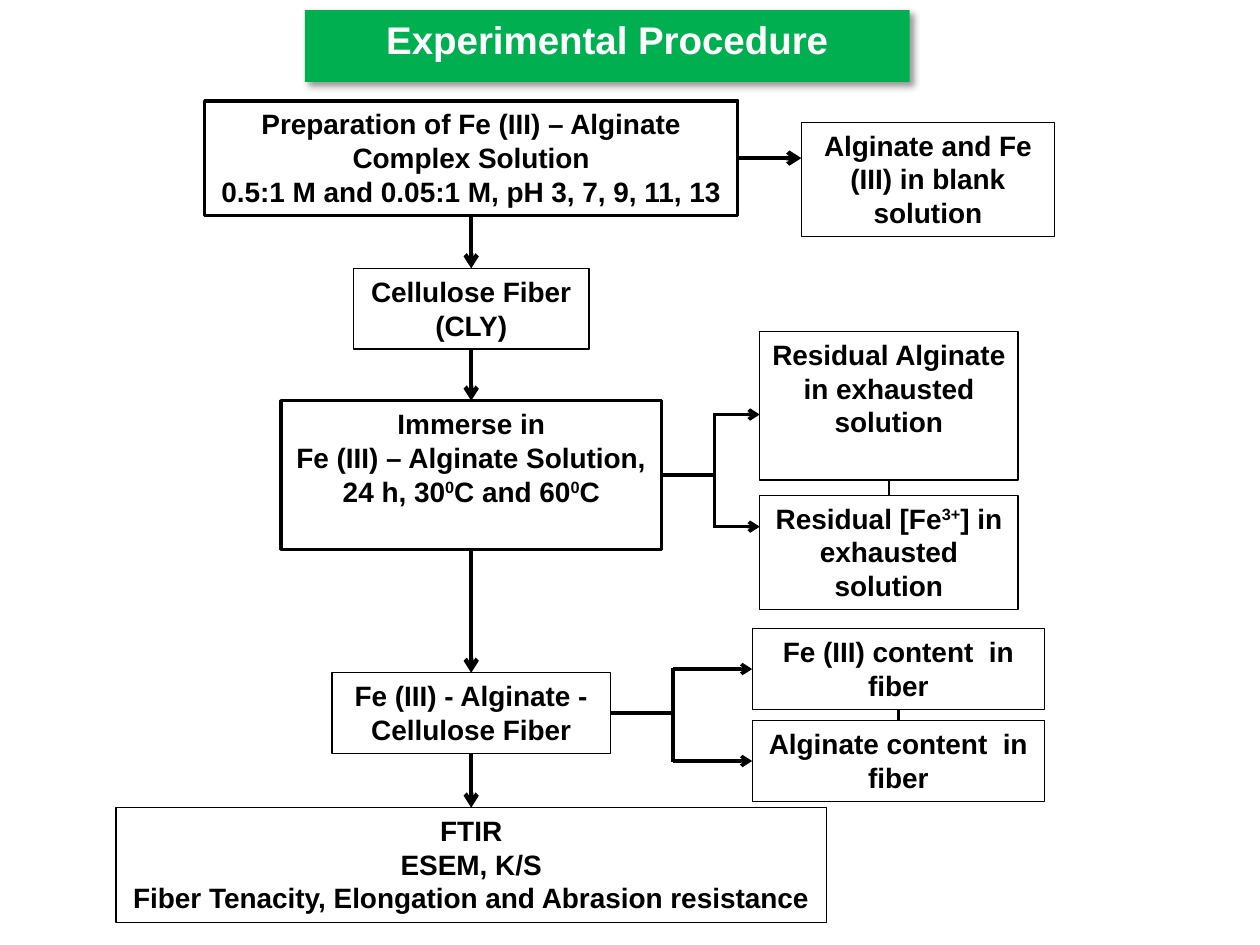
import pptx
import pptx.dml.color
import pptx.enum.shapes
import pptx.enum.text
import pptx.oxml
import pptx.oxml.ns
import pptx.util
from pptx.util import Inches

COLORS = {"ink": "000000", "paper": "FFFFFF", "title": "00B050"}
FONT = "Arial"
AXIS = 3.74  # shared centre of the main flow
TOP, LEFT, BOTTOM, RIGHT = range(4)
NAMESPACE = pptx.oxml.ns.nsdecls("a")


def rgb(name):
    return pptx.dml.color.RGBColor.from_string(COLORS[name])


def write_text(shape, text, size=16, color="ink", wrap=True):
    """Write one paragraph a line; parts between ^ signs are superscript."""
    frame = shape.text_frame
    frame.word_wrap = wrap
    frame.vertical_anchor = pptx.enum.text.MSO_ANCHOR.TOP
    for index, line in enumerate(text.split("\n")):
        paragraph = frame.add_paragraph() if index else frame.paragraphs[0]
        paragraph.alignment = pptx.enum.text.PP_ALIGN.CENTER
        for position, part in enumerate(line.split("^")):
            run = paragraph.add_run()
            run.text = part
            run.font.name = FONT
            run.font.size = pptx.util.Pt(size)
            run.font.bold = True
            run.font.color.rgb = rgb(color)
            if position % 2:
                run._r.get_or_add_rPr().set("baseline", "30000")


def add_box(slide, left, top, width, height, text, line=0.75, fill=None, **text_format):
    shape = slide.shapes.add_shape(
        pptx.enum.shapes.MSO_SHAPE.RECTANGLE,
        Inches(left), Inches(top), Inches(width), Inches(height))
    shape.shadow.inherit = False
    if fill:
        shape.fill.solid()
        shape.fill.fore_color.rgb = rgb(fill)
    else:
        shape.fill.background()
    if line:
        shape.line.color.rgb = rgb("ink")
        shape.line.width = pptx.util.Pt(line)
    else:
        shape.line.fill.background()
    write_text(shape, text, **text_format)
    return shape


def add_step(slide, top, width, height, text, **box_format):
    """Add a box of the main flow, centred on its axis."""
    return add_box(slide, AXIS - width / 2, top, width, height, text,
                   wrap=False, **box_format)


def add_title(slide, text):
    shape = add_box(slide, 2.42, 0.08, 4.8, 0.57, text, line=None,
                    fill="title", size=22, color="paper")
    effects = shape._element.spPr.find(pptx.oxml.ns.qn("a:effectLst"))
    effects.append(pptx.oxml.parse_xml(
        f'<a:outerShdw {NAMESPACE} blurRad="50800" dist="38100" dir="2700000" '
        f'algn="tl" rotWithShape="0"><a:srgbClr val="{COLORS["ink"]}">'
        '<a:alpha val="40000"/></a:srgbClr></a:outerShdw>'))


def side(shape, site):
    """Return the middle of one side of a box, in inches."""
    x = {LEFT: 0, RIGHT: 1}.get(site, 0.5) * shape.width + shape.left
    y = {TOP: 0, BOTTOM: 1}.get(site, 0.5) * shape.height + shape.top
    return x / Inches(1), y / Inches(1)


def add_link(slide, start, end, width=2.5, arrow=True):
    """Join two ends, each a point or a (box, side) pair."""
    glued = [not isinstance(stop[0], (int, float)) for stop in (start, end)]
    points = [side(*stop) if joined else stop
              for stop, joined in zip((start, end), glued)]
    connector = slide.shapes.add_connector(
        pptx.enum.shapes.MSO_CONNECTOR.STRAIGHT,
        *(Inches(value) for point in points for value in point))
    if glued[0]:
        connector.begin_connect(*start)
    if glued[1]:
        connector.end_connect(*end)
    connector.line.color.rgb = rgb("ink")
    connector.line.width = pptx.util.Pt(width)
    if arrow:
        connector.line._get_or_add_ln().append(
            pptx.oxml.parse_xml(f'<a:tailEnd {NAMESPACE} type="arrow"/>'))
    connector._element.spPr.append(
        pptx.oxml.parse_xml(f"<a:effectLst {NAMESPACE}/>"))


def add_fork(slide, source, stem, ends):
    """Branch from the right of a box, through a vertical stem, to two ends."""
    heights = [end[1] if isinstance(end[0], float) else side(*end)[1] for end in ends]
    add_link(slide, (source, RIGHT), (stem, side(source, RIGHT)[1]), 2.25, arrow=False)
    add_link(slide, (stem, heights[0] - 0.01), (stem, heights[1] + 0.01), 2, arrow=False)
    for end, height in zip(ends, heights):
        add_link(slide, (stem, height), end, 2)


def main():
    presentation = pptx.Presentation()
    presentation.slide_width, presentation.slide_height = Inches(10), Inches(7.5)
    slide = presentation.slides.add_slide(presentation.slide_layouts[6])

    add_title(slide, "Experimental Procedure")

    # Main flow
    preparation = add_step(
        slide, 0.8, 4.23, 0.91,
        "Preparation of Fe (III) – Alginate\nComplex Solution\n"
        "0.5:1 M and 0.05:1 M, pH 3, 7, 9, 11, 13", line=2, fill="paper")
    cellulose = add_step(slide, 2.13, 1.87, 0.64, "Cellulose Fiber\n(CLY)")
    immersion = add_step(
        slide, 3.18, 3.02, 1.18,
        "Immerse in\nFe (III) – Alginate Solution,\n24 h, 30^0^C and 60^0^C",
        line=2, fill="paper")
    treated_fiber = add_step(
        slide, 5.34, 2.21, 0.64, "Fe (III) - Alginate -\nCellulose Fiber")
    tests = add_step(
        slide, 6.41, 5.64, 0.91,
        "FTIR\nESEM, K/S\nFiber Tenacity, Elongation and Abrasion resistance")
    steps = [preparation, cellulose, immersion, treated_fiber, tests]
    for upper, lower in zip(steps, steps[1:]):
        add_link(slide, (upper, BOTTOM), (lower, TOP))

    # Measurements beside the flow
    add_box(slide, 6.36, 0.97, 2.01, 0.91, "Alginate and Fe (III) in blank solution")
    residual_alginate = add_box(
        slide, 6.03, 2.63, 2.05, 1.18, "Residual Alginate in exhausted solution")
    residual_iron = add_box(
        slide, 6.03, 3.93, 2.05, 0.91, "Residual [Fe^3+^] in exhausted solution")
    iron_content = add_box(slide, 5.97, 4.99, 2.32, 0.64, "Fe (III) content  in fiber")
    alginate_content = add_box(
        slide, 5.97, 5.72, 2.32, 0.64, "Alginate content  in fiber")
    for upper, lower in ((residual_alginate, residual_iron),
                         (iron_content, alginate_content)):
        add_link(slide, (upper, BOTTOM), (lower, TOP), 1.5, arrow=False)

    # Links from the flow to the measurements
    add_link(slide, (preparation, RIGHT), (6.36, side(preparation, RIGHT)[1]))
    add_fork(slide, immersion, 5.67, [(6.03, 3.29), (6.03, 4.18)])
    add_fork(slide, treated_fiber, 5.34,
             [(iron_content, LEFT), (alginate_content, LEFT)])

    presentation.save("out.pptx")


if __name__ == "__main__":
    main()
